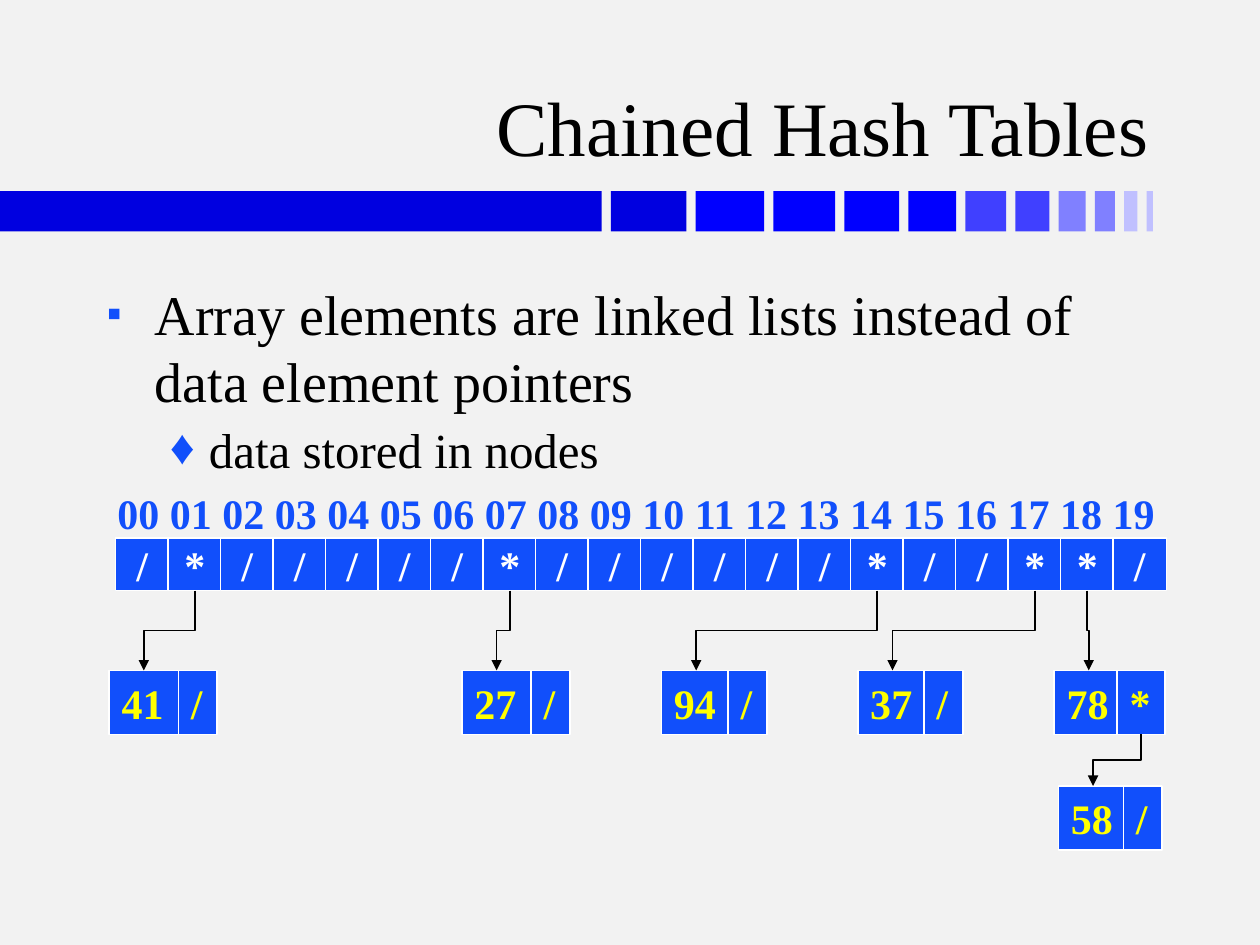
from lxml.etree import SubElement
from pptx import Presentation
from pptx.dml.color import RGBColor
from pptx.enum.shapes import MSO_CONNECTOR as Link, MSO_SHAPE as Preset
from pptx.enum.text import MSO_ANCHOR as Anchor, PP_ALIGN as Align
from pptx.oxml.ns import qn
from pptx.util import Inches, Pt

COLUMNS, ROWS = 24, 18
UNIT = Inches(10) / COLUMNS
FONT = "Times New Roman"
COLOURS = {
    "page": "F2F2F2", "ink": "000000", "accent": "114FFB",
    "white": "FFFFFF", "yellow": "FFFF00",
}
BAR_COLOURS = ["0000E0"] * 2 + ["0000FF"] * 4 + [
    tint for tint in ("4040FF", "8080FF", "C0C0FF") for _ in range(2)
]
CELLS = "/*/////*//////*//**/"
NODES = [
    (1, "41", "/", 2.08, 1.32, 0.74),
    (7, "27", "/", 8.8, 1.32, 0.74),
    (14, "94", "/", 12.6, 1.27, 0.74),
    (17, "37", "/", 16.34, 1.26, 0.74),
    (18, "78", "*", 20.08, 1.2, 0.91),
]


def grid(*lengths):
    """Turn grid units into slide lengths."""
    return [round(length * UNIT) for length in lengths]


def rgb(name):
    """Look up a colour by name, or take its hex string."""
    return RGBColor.from_string(COLOURS.get(name, name))


def add_span(para, text, size, colour, bold=False):
    """Add one formatted run to a paragraph."""
    span = para.add_run()
    span.text = text
    span.font.name, span.font.size, span.font.bold = FONT, Pt(size), bold
    span.font.color.rgb = rgb(colour)


def add_bullet(para, mark, share, margin, hang, before):
    """Give a paragraph a coloured bullet, indents and space before."""
    props = para._p.get_or_add_pPr()
    props.set("marL", str(Inches(margin)))
    props.set("indent", str(-Inches(hang)))
    if before:
        spacing = SubElement(props, qn("a:spcBef"))
        SubElement(spacing, qn("a:spcPct"), val=str(before * 1000))
    colour = SubElement(props, qn("a:buClr"))
    SubElement(colour, qn("a:srgbClr"), val=COLOURS["accent"])
    SubElement(props, qn("a:buSzPct"), val=str(share * 1000))
    SubElement(props, qn("a:buFont"), typeface=FONT)
    SubElement(props, qn("a:buChar"), char=mark)


def add_rectangle(shapes, bounds, fill):
    """Add a plain borderless rectangle."""
    box = shapes.add_shape(Preset.RECTANGLE, *grid(*bounds))
    box.shadow.inherit = False
    box.fill.solid()
    box.fill.fore_color.rgb = rgb(fill)
    box.line.fill.background()
    return box


def add_cell(shapes, bounds, text, colour, align):
    """Add a white-edged cell holding bold text."""
    box = add_rectangle(shapes, bounds, "accent")
    box.line.color.rgb = rgb("white")
    box.line.width = Pt(1)
    frame = box.text_frame
    frame.word_wrap, frame.vertical_anchor = False, Anchor.MIDDLE
    para = frame.paragraphs[0]
    para.alignment = align
    add_span(para, text, 24, colour, bold=True)
    return box


def add_pointer(page, source, target):
    """Drop an elbow arrow from a cell's bottom to a node's top."""
    arrow = page.shapes.add_connector(Link.ELBOW, 0, 0, 0, 0)
    arrow.begin_connect(source, 2)
    arrow.end_connect(target, 0)
    start_x, end_x = source.left + source.width // 2, target.left + target.width // 2
    start_y, end_y = source.top + source.height, target.top
    arrow.width, arrow.height = end_y - start_y, abs(end_x - start_x)
    arrow.left = (start_x + end_x - arrow.width) // 2
    arrow.top = (start_y + end_y - arrow.height) // 2
    rightward = end_x > start_x
    props = arrow.element.spPr
    frame = props.find(qn("a:xfrm"))
    frame.set("rot", str((270 if rightward else 90) * 60000))
    frame.set("flipH", str(int(rightward)))
    frame.set("flipV", "0")
    arrow.line.color.rgb = rgb("ink")
    arrow.line.width = Pt(1)
    SubElement(props.find(qn("a:ln")), qn("a:tailEnd"), type="triangle")
    SubElement(props, qn("a:effectLst"))


def build_title(page, bounds):
    """Place the right-aligned title."""
    frame = page.shapes.add_textbox(*grid(*bounds)).text_frame
    frame.word_wrap, frame.vertical_anchor = True, Anchor.BOTTOM
    para = frame.paragraphs[0]
    para.alignment = Align.RIGHT
    add_span(para, "Chained Hash Tables", 44, "ink")


def build_bars(page, bounds):
    """Place the fading stripe of shrinking bars."""
    left, top, width, height = bounds
    first, largest, smallest = 11.46, 1.44, 0.12
    count = len(BAR_COLOURS) - 1
    step = (largest - smallest) / (count - 1)
    widths = [first] + [largest - step * place for place in range(count)]
    gap = (width - sum(widths)) / count
    for bar_width, colour in zip(widths, BAR_COLOURS):
        add_rectangle(page.shapes, (left, top, bar_width, height), colour)
        left += bar_width + gap


def build_body(page, bounds):
    """Place the two levels of bullet text."""
    frame = page.shapes.add_textbox(*grid(*bounds)).text_frame
    frame.word_wrap = True
    para = frame.paragraphs[0]
    add_bullet(para, "▪", 75, 0.38, 0.38, 0)
    add_span(para, "Array elements are linked lists instead of data element pointers", 32, "ink")
    para = frame.add_paragraph()
    para.level = 1
    add_bullet(para, "♦", 100, 0.81, 0.31, 10)
    add_span(para, "data stored in nodes", 28, "ink")


def build_array(page, bounds):
    """Place the index labels and the row of cells, and return the cells."""
    left, top, width, height = bounds
    pitch = width / len(CELLS)
    cells = [
        add_cell(page.shapes, (left + place * pitch, top, pitch + 0.02, height),
                 mark, "white", Align.CENTER)
        for place, mark in enumerate(CELLS)
    ]
    labels = page.shapes.add_textbox(*grid(left - 0.2, top - 1.08, width + 0.28, 1.2))
    labels.text_frame.word_wrap = False
    indexes = " ".join(f"{place:02}" for place in range(len(CELLS)))
    add_span(labels.text_frame.paragraphs[0], indexes, 24, "accent", bold=True)
    return cells


def build_node(page, bounds, value, mark, offset):
    """Place a node as a grouped value and link cell, and return both."""
    left, top, width, height = bounds
    shapes = page.shapes.add_group_shape().shapes
    return (
        add_cell(shapes, (left, top, 1.32, height), value, "yellow", Align.LEFT),
        add_cell(shapes, (left + offset, top, width - offset, height),
                 mark, "yellow", Align.LEFT),
    )


def build_chains(page, cells, top, height):
    """Place the nodes below the array and the arrows that reach them."""
    for place, value, mark, left, offset, link_width in NODES:
        bounds = (left, top, offset + link_width, height)
        node, tail = build_node(page, bounds, value, mark, offset)
        add_pointer(page, cells[place], node)
    last, _ = build_node(page, (20.16, top + 2.2, 1.98, height), "58", "/", 1.24)
    add_pointer(page, tail, last)


def main():
    """Build the slide and save the deck."""
    deck = Presentation()
    deck.slide_width, deck.slide_height = grid(COLUMNS, ROWS)
    page = deck.slides.add_slide(deck.slide_layouts[6])
    page.background.fill.solid()
    page.background.fill.fore_color.rgb = rgb("page")
    build_bars(page, (0, 3.64, 21.96, 0.77))
    build_title(page, (1.77, 0.45, 20.35, 2.94))
    build_body(page, (1.8, 5.21, 20.4, 10.8))
    cells = build_array(page, (2.2, 10.25, 20, 1))
    build_chains(page, cells, 12.77, 1.22)
    deck.save("out.pptx")


if __name__ == "__main__":
    main()
